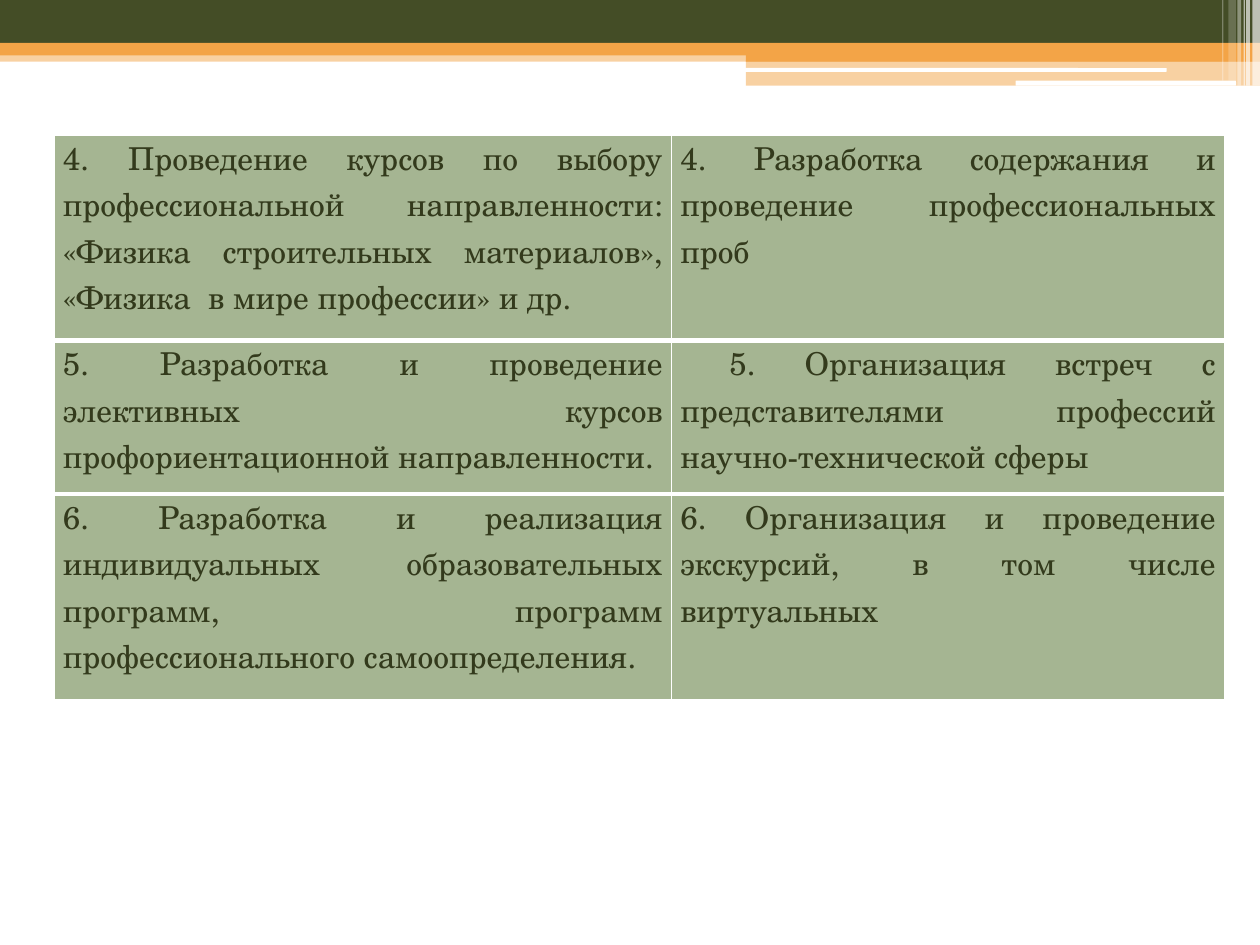
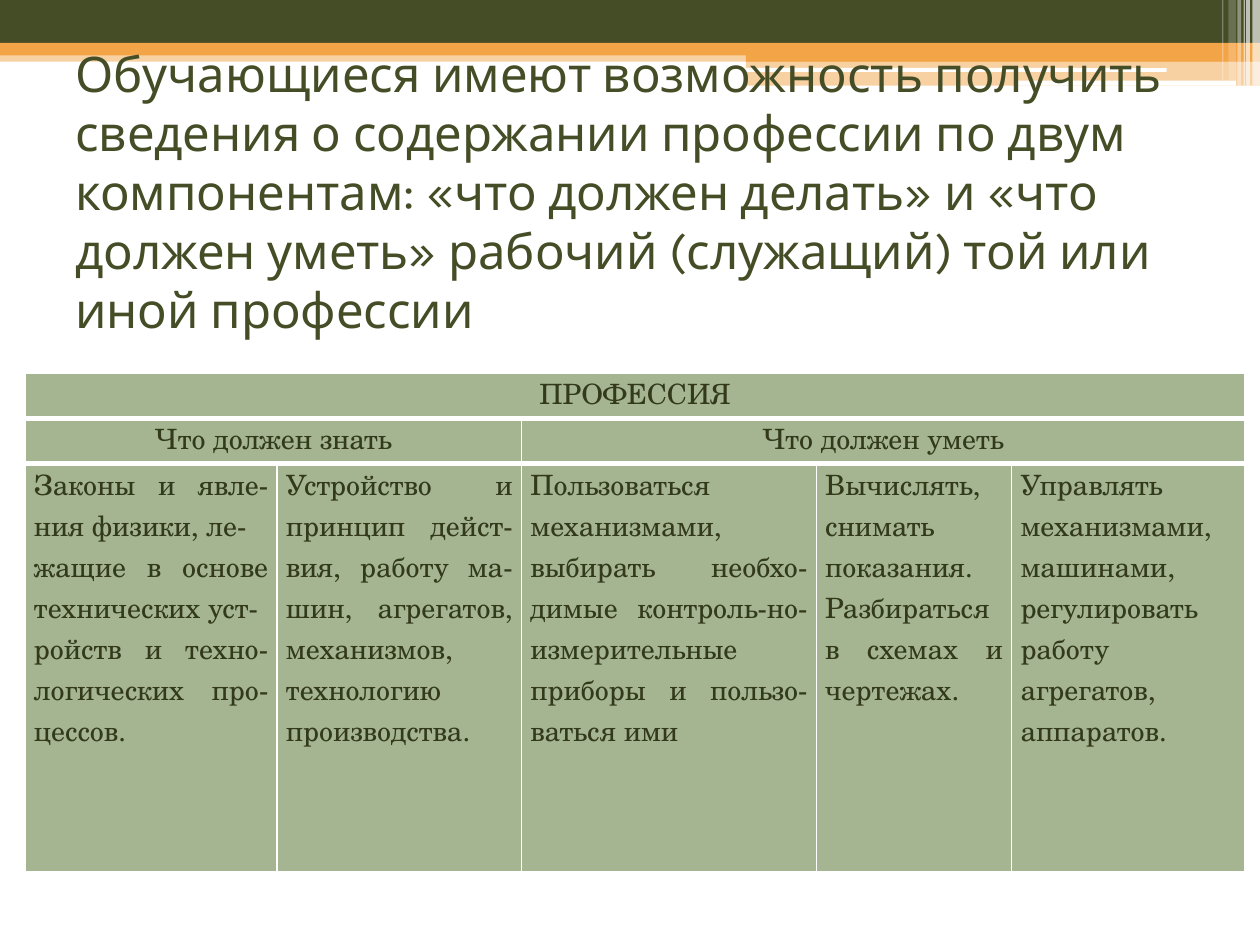
from dataclasses import dataclass

from lxml.etree import SubElement
from pptx import Presentation
from pptx.dml.color import RGBColor
from pptx.enum.shapes import MSO_SHAPE
from pptx.enum.text import MSO_ANCHOR, PP_ALIGN
from pptx.oxml.ns import qn
from pptx.slide import Slide
from pptx.table import _Cell
from pptx.text.text import TextFrame
from pptx.util import Pt

PX = 9144  # EMU in one px, 100 px to the inch
HEX = {
    "dark": "444D26",
    "orange": "F3A447",
    "white": "FFFFFF",
    "cell": "A5B592",
    "ink": "333A1C",
}
SERIF, SANS = "TeX Gyre Schola", "Karla"
THIN, THICK = 1, 3
BLANK = 6


@dataclass
class Band:
    left: int
    top: int
    width: int
    height: int
    color: str
    alpha: int = 100
    round: bool = False


@dataclass
class Entry:
    text: str
    span: int = 1
    align: PP_ALIGN = PP_ALIGN.JUSTIFY


@dataclass
class Grid:
    left: int
    top: int
    cols: list[int]
    rows: list[int]
    size: int
    entries: list[list[Entry]]


BANDS = [
    # Header stripes
    Band(0, 40, 1000, 9, "orange", 50),
    Band(0, 0, 1000, 34, "dark"),
    Band(0, 34, 1000, 10, "orange"),
    Band(592, 39, 408, 10, "orange"),
    Band(592, 48, 408, 20, "orange", 50),
    # White slits
    Band(591, 54, 335, 3, "white", round=True),
    Band(806, 64, 175, 4, "white", round=True),
    # Pale bars in the corner
    Band(994, 0, 6, 68, "white", 65),
    Band(989, 0, 3, 68, "white", 65),
    Band(987, 0, 1, 68, "white", 60),
    Band(982, 0, 3, 68, "white", 40),
    Band(975, 0, 6, 64, "white", 20),
    Band(970, 0, 1, 64, "white", 30),
]

TASKS = Grid(43, 107, [490, 439], [163, 122, 163], 18, [
    [Entry("4. Проведение курсов по выбору профессиональной направленности: "
           "«Физика строительных материалов», «Физика  в мире профессии» и др."),
     Entry("4. Разработка содержания и проведение профессиональных проб")],
    [Entry("5. Разработка и проведение элективных курсов "
           "профориентационной направленности."),
     Entry(" 5. Организация встреч с представителями профессий "
           "научно-технической сферы")],
    [Entry("6. Разработка и реализация индивидуальных образовательных программ, "
           "программ профессионального самоопределения."),
     Entry("6. Организация и проведение экскурсий, в том числе виртуальных")],
])

TITLE = ("Обучающиеся имеют возможность получить сведения о содержании профессии "
         "по двум компонентам: «что должен делать» и «что должен уметь» "
         "рабочий (служащий) той или иной профессии")

SKILLS = Grid(20, 296, [200, 194, 234, 155, 185], [36, 36, 324], 16, [
    [Entry("ПРОФЕССИЯ", 5, PP_ALIGN.CENTER)],
    [Entry("Что должен знать", 2, PP_ALIGN.CENTER),
     Entry("Что должен уметь", 3, PP_ALIGN.CENTER)],
    [Entry("Законы и явле-ния физики, ле- \nжащие в основе технических уст-\n"
           "ройств и техно-логических про-цессов."),
     Entry("Устройство и принцип дейст-вия, работу ма-шин, агрегатов, "
           "механизмов, технологию производства."),
     Entry("Пользоваться механизмами, выбирать необхо-димые "
           "контроль-но-измерительные приборы и пользо-ваться ими"),
     Entry("Вычислять, снимать показания. Разбираться в схемах и чертежах."),
     Entry("Управлять механизмами, машинами, регулировать работу "
           "агрегатов, аппаратов.")],
])


def rgb(name: str) -> RGBColor:
    return RGBColor.from_string(HEX[name])


def style(frame: TextFrame, font: str, size: int, color: str,
          align: PP_ALIGN) -> None:
    for par in frame.paragraphs:
        par.alignment = align
        for run in par.runs:
            run.font.name = font
            run.font.size = Pt(size)
            run.font.color.rgb = rgb(color)


def draw_band(slide: Slide, band: Band) -> None:
    kind = MSO_SHAPE.ROUNDED_RECTANGLE if band.round else MSO_SHAPE.RECTANGLE
    box = slide.shapes.add_shape(
        kind, band.left * PX, band.top * PX, band.width * PX, band.height * PX)
    box.shadow.inherit = False
    box.line.fill.background()
    box.fill.solid()
    box.fill.fore_color.rgb = rgb(band.color)
    if band.alpha < 100:
        tint = box.fill._xPr.find(".//" + qn("a:srgbClr"))
        SubElement(tint, qn("a:alpha"), val=str(band.alpha * 1000))


def draw_edges(cell: _Cell, top: int, base: int) -> None:
    props = cell._tc.get_or_add_tcPr()
    widths = {"a:lnL": THIN, "a:lnR": THIN, "a:lnT": top, "a:lnB": base}
    for spot, (tag, width) in enumerate(widths.items()):
        line = SubElement(props, qn(tag), w=str(Pt(width)))
        fill = SubElement(line, qn("a:solidFill"))
        SubElement(fill, qn("a:srgbClr"), val=HEX["white"])
        props.insert(spot, line)  # borders stand before the fill


def draw_grid(slide: Slide, grid: Grid) -> None:
    table = slide.shapes.add_table(
        len(grid.rows), len(grid.cols), grid.left * PX, grid.top * PX,
        sum(grid.cols) * PX, sum(grid.rows) * PX).table
    for col, width in zip(table.columns, grid.cols):
        col.width = width * PX
    for row, height in zip(table.rows, grid.rows):
        row.height = height * PX

    # Fill and edges: thick lines part the rows
    last = len(grid.rows) - 1
    for y, row in enumerate(table.rows):
        for cell in row.cells:
            cell.fill.solid()
            cell.fill.fore_color.rgb = rgb("cell")
            cell.margin_left = cell.margin_right = 7 * PX
            cell.margin_top = cell.margin_bottom = 0
            draw_edges(cell, THICK if y else THIN, THICK if y < last else THIN)

    # Text, with merged cells where an entry spans columns
    for y, line in enumerate(grid.entries):
        x = 0
        for entry in line:
            cell = table.cell(y, x)
            if entry.span > 1:
                cell.merge(table.cell(y, x + entry.span - 1))
            cell.text_frame.text = entry.text
            style(cell.text_frame, SERIF, grid.size, "ink", entry.align)
            x += entry.span


def draw_title(slide: Slide, text: str) -> None:
    box = slide.shapes.add_textbox(50 * PX, 30 * PX, 900 * PX, 243 * PX)
    frame = box.text_frame
    frame.word_wrap = True
    frame.vertical_anchor = MSO_ANCHOR.MIDDLE
    frame.text = text
    style(frame, SANS, 28, "dark", PP_ALIGN.LEFT)


def add_page(deck: Presentation) -> Slide:
    slide = deck.slides.add_slide(deck.slide_layouts[BLANK])
    for band in BANDS:
        draw_band(slide, band)
    return slide


def main() -> None:
    deck = Presentation()
    deck.slide_width, deck.slide_height = 1000 * PX, 750 * PX

    # Slide 1: tasks
    draw_grid(add_page(deck), TASKS)

    # Slide 2: what a trade asks for
    page = add_page(deck)
    draw_title(page, TITLE)
    draw_grid(page, SKILLS)

    deck.save("out.pptx")


if __name__ == "__main__":
    main()
